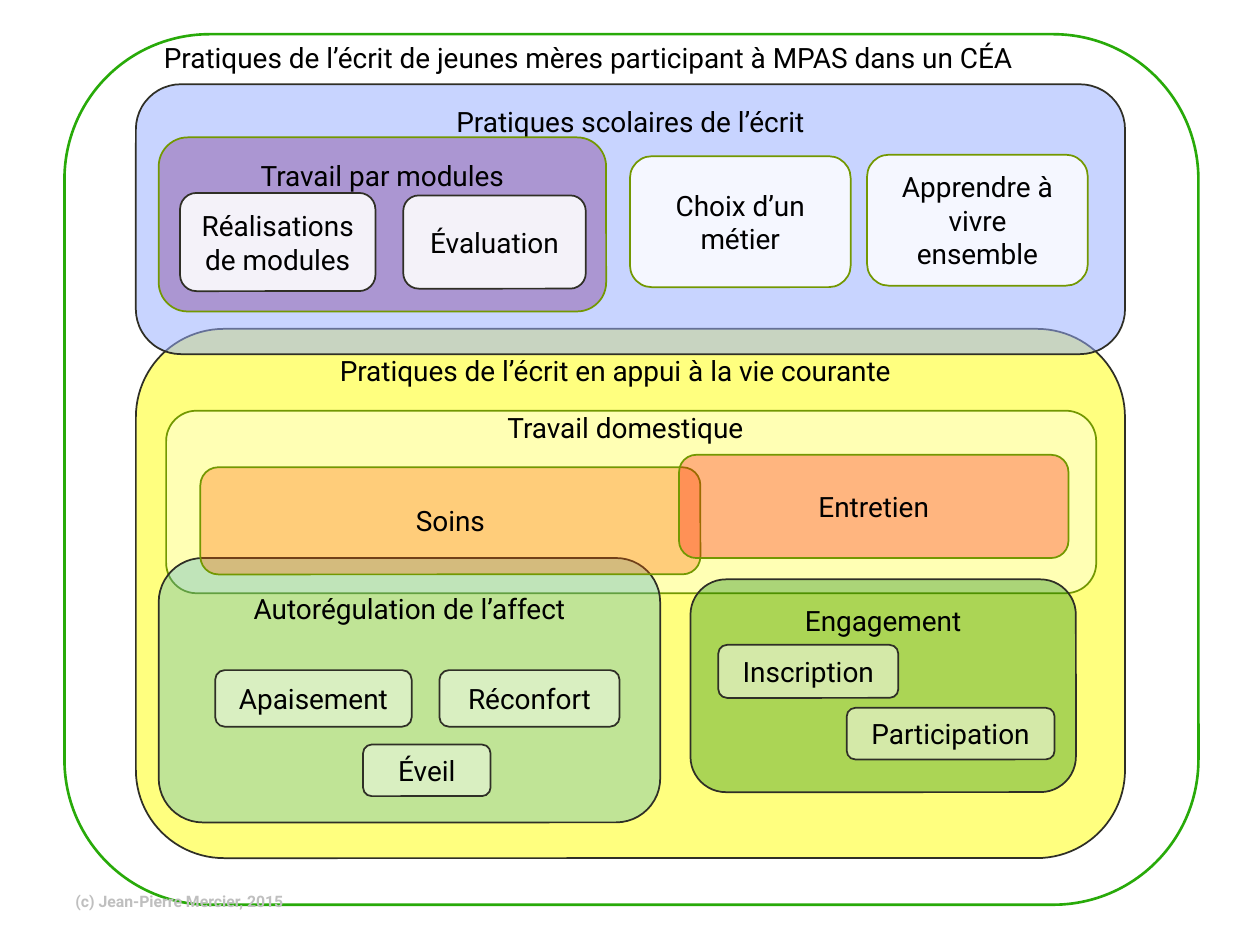
import pptx
import pptx.util
import pptx.oxml
import pptx.oxml.ns
import pptx.dml.color
import pptx.enum.shapes
import pptx.enum.text

Cm, Pt = pptx.util.Cm, pptx.util.Pt
ALIGN = pptx.enum.text.PP_ALIGN
ANCHOR = pptx.enum.text.MSO_ANCHOR

COLORS = {
    "white": "FFFFFF", "black": "000000", "gray": "BFBFBF",
    "dark": "2F2F26", "green": "28AA09", "olive": "739801",
    "yellow": "FFFF00", "blue": "97ADFF", "purple": "660066",
    "teal": "41B0C6", "leaf": "008000", "orange": "FF6600", "red": "FF0000",
}


def tint(name):
    return pptx.dml.color.RGBColor.from_string(COLORS[name])


class Board:
    """Holds the text style and the slide being filled."""

    font = {"name": "Roboto", "size": Pt(16), "bold": False}

    def __init__(self, slide):
        self.slide = slide
        self.shapes = slide.shapes

    def letter(self, shape, text, align, anchor, color="black", **style):
        """Puts formatted text into a shape."""
        frame = shape.text_frame
        form = {"word_wrap": True, "vertical_anchor": anchor,
                "auto_size": pptx.enum.text.MSO_AUTO_SIZE.NONE}
        for key, value in form.items():
            setattr(frame, key, value)
        para = frame.paragraphs[0]
        para.alignment = align
        run = para.add_run()
        run.text = text
        for key, value in {**self.font, **style}.items():
            setattr(run.font, key, value)
        run.font.color.rgb = tint(color)

    def title(self, text, *area):
        """Places the title in front of the shapes drawn so far."""
        shape = self.shapes.title
        for key, value in zip(("left", "top", "width", "height"), area):
            setattr(shape, key, Cm(value))
        self.shapes._spTree.append(shape._element)
        self.letter(shape, text, ALIGN.LEFT, ANCHOR.TOP)

    def label(self, text, *area, anchor=ANCHOR.TOP, **style):
        shape = self.shapes.add_textbox(*map(Cm, area))
        self.letter(shape, text, ALIGN.LEFT, anchor, **style)

    def box(self, text, *area, fill="white", alpha=100, line="dark",
            width=1, head=None):
        """Draws a rounded box; head is the top inset of a heading in cm."""
        kind = pptx.enum.shapes.MSO_SHAPE.ROUNDED_RECTANGLE
        shape = self.shapes.add_shape(kind, *map(Cm, area))
        shape.shadow.inherit = False
        shape.fill.solid()
        shape.fill.fore_color.rgb = tint(fill)
        shape.line.color.rgb = tint(line)
        shape.line.width = Pt(width)
        if alpha < 100:
            tag = pptx.oxml.ns.qn("a:srgbClr")
            color = shape._element.spPr.find(".//" + tag)
            node = pptx.oxml.parse_xml(
                f'<a:alpha {pptx.oxml.ns.nsdecls("a")} val="{alpha * 1000}"/>')
            color.append(node)
        if text:
            anchor = ANCHOR.MIDDLE if head is None else ANCHOR.TOP
            self.letter(shape, text, ALIGN.CENTER, anchor)
        if head is not None:
            shape.text_frame.margin_top = Cm(head)


def school(board):
    board.box("Pratiques scolaires de l’écrit", 2.74, 1.7, 19.94, 5.44,
              fill="blue", alpha=52, head=0.14)
    board.box("Travail par modules", 3.2, 2.77, 9.02, 3.51,
              fill="purple", alpha=29, line="olive", head=0.26)
    board.box("Réalisations de modules", 3.63, 3.89, 3.94, 1.98, alpha=88)
    board.box("Évaluation", 8.13, 3.94, 3.68, 1.88, alpha=88)
    for text, left, top in (("Choix d’un métier", 12.7, 3.15),
                            ("Apprendre à vivre ensemble", 17.48, 3.12)):
        board.box(text, left, top, 4.45, 2.64, alpha=83, line="olive")


def daily(board):
    board.box("", 3.35, 8.28, 18.75, 3.68, alpha=42, line="olive")
    board.label("Pratiques de l’écrit en appui à la vie courante",
                6.6, 7.01, 12.83, 0.94)
    board.box("Autorégulation de l’affect", 3.2, 11.25, 10.11, 5.33,
              fill="teal", alpha=33, head=0.42)
    board.box("Éveil", 7.32, 15.01, 2.57, 1.04, alpha=41)
    board.label("Travail domestique", 9.98, 8.15, 5.61, 0.94)
    board.box("Réconfort", 8.86, 13.51, 3.63, 1.14, alpha=41)
    board.box("Apaisement", 4.34, 13.51, 3.96, 1.14, alpha=41)
    board.box("Engagement", 13.92, 11.68, 7.77, 4.29,
              fill="leaf", alpha=33, head=0.28)
    board.box("Inscription", 14.48, 13, 3.63, 1.07, alpha=49)
    board.box("Participation", 17.07, 14.27, 4.19, 1.04, alpha=49)
    board.box("Soins", 4.04, 9.42, 10.08, 2.16,
              fill="orange", alpha=32, line="olive")
    board.box("Entretien", 13.69, 9.17, 7.85, 2.08,
              fill="red", alpha=29, line="olive")


def main():
    deck = pptx.Presentation()
    deck.slide_width, deck.slide_height = Cm(25.4), Cm(19.05)
    board = Board(deck.slides.add_slide(deck.slide_layouts[5]))
    board.box("", 1.3, 0.69, 22.86, 17.55, line="green", width=1.5)
    board.title("Pratiques de l’écrit de jeunes mères participant à MPAS "
                "dans un CÉA", 3.05, 0.69, 19.33, 0.94)
    board.box("", 2.74, 6.63, 19.94, 10.67, fill="yellow", alpha=50)
    school(board)
    daily(board)
    board.label("(c) Jean-Pierre Mercier, 2015", 1.27, 17.65, 8.05, 1.02,
                anchor=ANCHOR.MIDDLE, color="gray", size=Pt(9), bold=True)
    deck.save("out.pptx")


if __name__ == "__main__":
    main()
